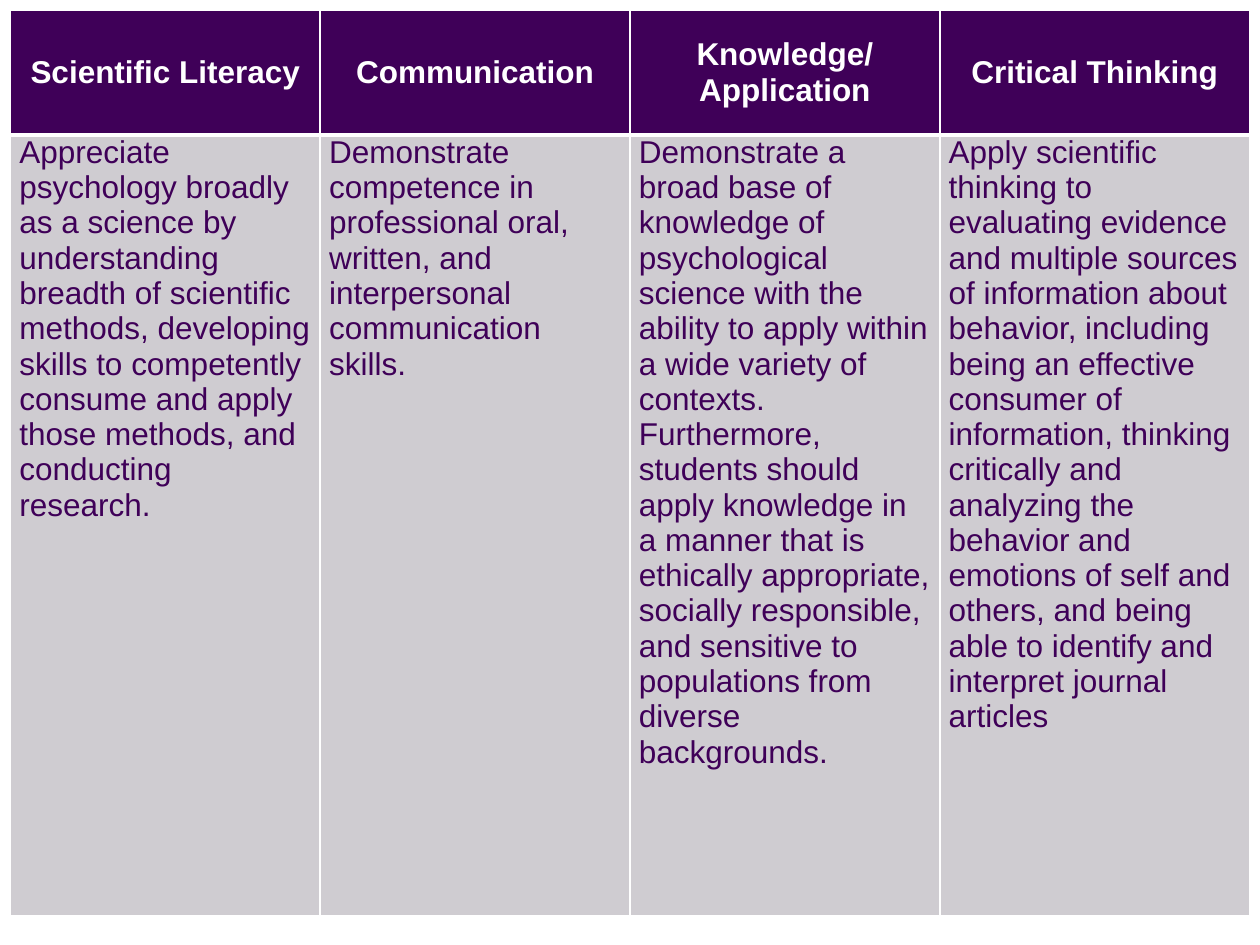
from lxml import etree
from pptx import Presentation
from pptx.dml.color import RGBColor
from pptx.enum.text import MSO_ANCHOR, PP_ALIGN
from pptx.oxml.ns import qn
from pptx.util import Cm, Pt

CENTER, LEFT = PP_ALIGN.CENTER, PP_ALIGN.LEFT
MIDDLE, TOP = MSO_ANCHOR.MIDDLE, MSO_ANCHOR.TOP
PURPLE, GREY, WHITE = "3F0058", "CFCCD1", "FFFFFF"
HEADER_HEIGHT = Cm(2.51)
HEADER_BORDERS = {"L": 1, "R": 1, "T": 1, "B": 3}
BODY_BORDERS = {"L": 1, "R": 1, "B": 1}

GOALS = [
    (["Scientific Literacy"],
     "Appreciate psychology broadly as a science by understanding breadth of "
     "scientific methods, developing skills to competently consume and apply "
     "those methods, and conducting research."),
    (["Communication"],
     "Demonstrate competence in professional oral, written, and interpersonal "
     "communication skills."),
    (["Knowledge/", "Application"],
     "Demonstrate a broad base of knowledge of psychological science with the "
     "ability to apply within a wide variety of contexts. Furthermore, students "
     "should apply knowledge in a manner that is ethically appropriate, socially "
     "responsible, and sensitive to populations from diverse backgrounds."),
    (["Critical Thinking"],
     "Apply scientific thinking to evaluating evidence and multiple sources of "
     "information about behavior, including being an effective consumer of "
     "information, thinking critically and analyzing the behavior and emotions "
     "of self and others, and being able to identify and interpret journal "
     "articles"),
]


def color(value):
    return RGBColor.from_string(value)


def add_borders(cell, widths):
    """Draw white borders; widths maps a side letter to points."""
    properties = cell._tc.get_or_add_tcPr()
    for side, width in widths.items():
        line = etree.SubElement(properties, qn(f"a:ln{side}"), w=str(Pt(width)))
        fill = etree.SubElement(line, qn("a:solidFill"))
        etree.SubElement(fill, qn("a:srgbClr"), val=WHITE)


def fill_cell(cell, lines, is_header):
    add_borders(cell, HEADER_BORDERS if is_header else BODY_BORDERS)
    cell.fill.solid()
    cell.fill.fore_color.rgb = color(PURPLE if is_header else GREY)
    cell.margin_left = cell.margin_right = Cm(0.18)
    cell.margin_top = cell.margin_bottom = 0
    cell.vertical_anchor = MIDDLE if is_header else TOP
    frame = cell.text_frame
    for index, line in enumerate(lines):
        para = frame.add_paragraph() if index else frame.paragraphs[0]
        para.alignment = CENTER if is_header else LEFT
        span = para.add_run()
        span.text = line
        span.font.name = "Arial"
        span.font.size = Pt(18)
        span.font.bold = is_header
        span.font.color.rgb = color(WHITE if is_header else PURPLE)


def add_goal_table(page, left, top, width, height):
    table = page.shapes.add_table(2, len(GOALS), left, top, width, height).table
    table.rows[0].height = HEADER_HEIGHT
    table.rows[1].height = height - HEADER_HEIGHT
    for column, (title, description) in enumerate(GOALS):
        fill_cell(table.cell(0, column), title, True)
        fill_cell(table.cell(1, column), [description], False)


def main():
    deck = Presentation()
    deck.slide_width, deck.slide_height = Cm(25.4), Cm(19.05)
    page = deck.slides.add_slide(deck.slide_layouts[6])
    add_goal_table(page, Cm(0.21), Cm(0.21), Cm(24.98), Cm(18.26))
    deck.save("out.pptx")


if __name__ == "__main__":
    main()
